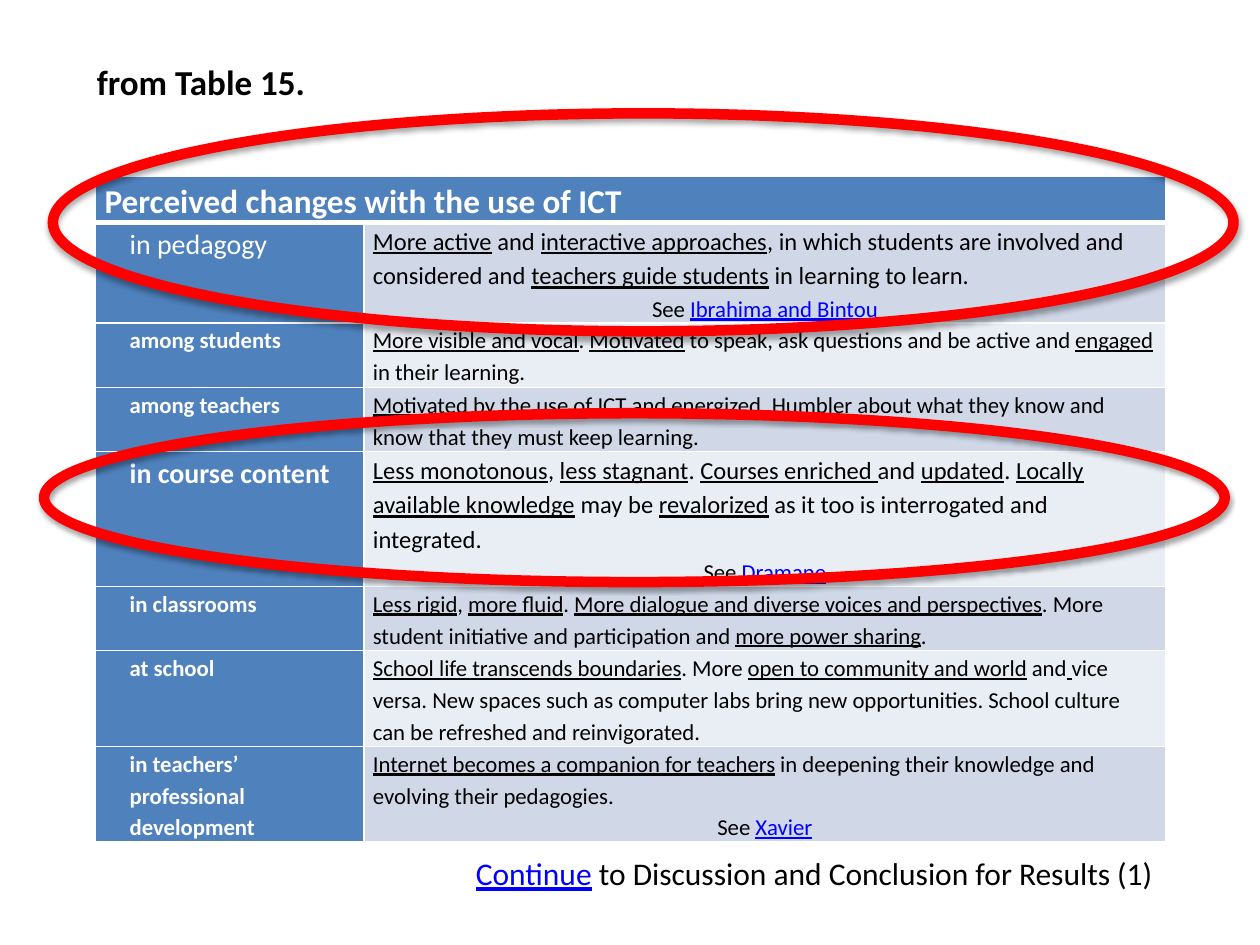
from dataclasses import dataclass

from lxml.etree import SubElement
from pptx import Presentation
from pptx.dml.color import RGBColor
from pptx.enum.shapes import MSO_SHAPE
from pptx.enum.text import MSO_ANCHOR, MSO_AUTO_SIZE, PP_ALIGN
from pptx.oxml.ns import qn
from pptx.util import Inches, Pt


@dataclass(frozen=True)
class Theme:
    font: str = "Calibri"
    text: str = "000000"
    light: str = "FFFFFF"
    link: str = "0000FF"
    heading_fill: str = "4F81BD"
    bands: tuple = ("D0D8E8", "E9EDF4")
    highlight: str = "FF0000"
    title_size: int = 20
    header_size: int = 19
    footer_size: int = 18
    label_size: int = 16
    emphasis_size: int = 14
    body_size: int = 13


class SlideBuilder:
    def __init__(self, slide, theme):
        self.slide = slide
        self.theme = theme

    def run(self, paragraph, text, size, color, bold=False, underline=False):
        run = paragraph.add_run()
        run.text = text
        font = run.font
        font.name, font.size = self.theme.font, Pt(size)
        font.bold, font.underline = bold, underline
        font.color.rgb = RGBColor.from_string(color)

    def marked_runs(self, paragraph, text, size):
        """Underline the parts enclosed in underscores."""
        for index, part in enumerate(text.split("_")):
            if part:
                self.run(paragraph, part, size, self.theme.text, underline=index % 2 == 1)

    def spacing(self, paragraph, before=0, after=0):
        paragraph.line_spacing = 1.15
        paragraph.space_before, paragraph.space_after = Pt(before), Pt(after)

    def text_box(self, left, top, width, height):
        box = self.slide.shapes.add_textbox(Inches(left), Inches(top), Inches(width), Inches(height))
        return box.text_frame

    def cell(self, cell, fill, bottom_width=1):
        cell.margin_left = cell.margin_right = Inches(0.07)
        cell.margin_top = cell.margin_bottom = 0
        properties = cell._tc.get_or_add_tcPr()
        for side in "LRTB":
            width = bottom_width if side == "B" else 1
            border = SubElement(properties, qn(f"a:ln{side}"), w=str(Pt(width)))
            line_fill = SubElement(border, qn("a:solidFill"))
            SubElement(line_fill, qn("a:srgbClr"), val=self.theme.light)
        cell.fill.solid()
        cell.fill.fore_color.rgb = RGBColor.from_string(fill)
        return cell.text_frame

    def changes_table(self, left, top, widths, heights, header, changes):
        theme = self.theme
        table = self.slide.shapes.add_table(
            len(heights), len(widths), Inches(left), Inches(top),
            Inches(sum(widths)), Inches(sum(heights))).table
        for column, width in zip(table.columns, widths):
            column.width = Inches(width)
        for row, height in zip(table.rows, heights):
            row.height = Inches(height)

        # Header across both columns
        table.cell(0, 0).merge(table.cell(0, 1))
        for column in range(2):
            self.cell(table.cell(0, column), theme.heading_fill, bottom_width=3)
        heading = table.cell(0, 0).text_frame.paragraphs[0]
        self.spacing(heading, before=5, after=5)
        self.run(heading, header, theme.header_size, theme.light, bold=True)

        # One row for each area of change
        for row, (area, change, person, emphasized, bold) in enumerate(changes, start=1):
            label = self.cell(table.cell(row, 0), theme.heading_fill).paragraphs[0]
            self.spacing(label, before=6)
            label._p.get_or_add_pPr().set("marL", str(Inches(0.2)))
            label_size = theme.label_size if emphasized else theme.body_size
            self.run(label, area, label_size, theme.light, bold=bold)

            band = theme.bands[(row - 1) % 2]
            details = self.cell(table.cell(row, 1), band)
            description = details.paragraphs[0]
            self.spacing(description, before=6, after=0 if person else 6)
            self.marked_runs(description, change,
                             theme.emphasis_size if emphasized else theme.body_size)
            if person:
                reference = details.add_paragraph()
                reference.alignment = PP_ALIGN.CENTER
                self.spacing(reference, after=6)
                self.run(reference, "See ", theme.body_size, theme.text)
                self.run(reference, person, theme.body_size, theme.link, underline=True)

    def title(self, text, left, top, width, height):
        frame = self.text_box(left, top, width, height)
        frame.word_wrap = True
        frame.vertical_anchor = MSO_ANCHOR.MIDDLE
        self.run(frame.paragraphs[0], text, self.theme.title_size, self.theme.text, bold=True)

    def footer(self, link, text, left, top, width, height):
        frame = self.text_box(left, top, width, height)
        frame.word_wrap = False
        frame.auto_size = MSO_AUTO_SIZE.SHAPE_TO_FIT_TEXT
        paragraph = frame.paragraphs[0]
        paragraph.alignment = PP_ALIGN.RIGHT
        self.run(paragraph, link, self.theme.footer_size, self.theme.link, underline=True)
        self.run(paragraph, text, self.theme.footer_size, self.theme.text)

    def highlight(self, left, top, width, height):
        ring = self.slide.shapes.add_shape(
            MSO_SHAPE.OVAL, Inches(left), Inches(top), Inches(width), Inches(height))
        ring.fill.background()
        ring.line.color.rgb = RGBColor.from_string(self.theme.highlight)
        ring.line.width = Pt(6)
        # Soft shadow straight below the ring
        ring.shadow.inherit = False
        effects = ring._element.spPr.find(qn("a:effectLst"))
        shadow = SubElement(effects, qn("a:outerShdw"), blurRad=str(Pt(3.1)),
                            dist=str(Pt(1.8)), dir="5400000", rotWithShape="0")
        color = SubElement(shadow, qn("a:srgbClr"), val=self.theme.text)
        SubElement(color, qn("a:alpha"), val="35000")


# Area, change, person referred to, emphasized, bold label
CHANGES = [
    ("in pedagogy",
     "_More active_ and _interactive approaches_, in which students are involved and "
     "considered and _teachers guide students_ in learning to learn.",
     "Ibrahima and Bintou", True, False),
    ("among students",
     "_More visible and vocal_. _Motivated_ to speak, ask questions and be active and "
     "_engaged_ in their learning.", None, False, True),
    ("among teachers",
     "_Motivated_ by the use of ICT and _energized_. _Humbler_ about what they know and "
     "know that they must keep learning.", None, False, True),
    ("in course content",
     "_Less monotonous_, _less stagnant_. _Courses enriched _and _updated_. "
     "_Locally available knowledge_ may be _revalorized_ as it too is interrogated and "
     "integrated.", "Dramane", True, True),
    ("in classrooms",
     "_Less rigid_, _more fluid_. _More dialogue and diverse voices and perspectives_. "
     "More student initiative and participation and _more power sharing_.",
     None, False, True),
    ("at school",
     "_School life transcends boundaries_. More _open to community and world_ and_ _vice "
     "versa. New spaces such as computer labs bring new opportunities. School culture "
     "can be refreshed and reinvigorated.", None, False, True),
    ("in teachers’ professional development",
     "_Internet becomes a companion for teachers_ in deepening their knowledge and "
     "evolving their pedagogies.", "Xavier", False, True),
]


def main():
    presentation = Presentation()
    presentation.slide_width, presentation.slide_height = Inches(10), Inches(7.5)
    slide = presentation.slides.add_slide(presentation.slide_layouts[6])
    builder = SlideBuilder(slide, Theme())

    # Table of changes
    builder.changes_table(0.76, 1.4, (2.13, 6.36),
                          (0.36, 0.76, 0.51, 0.51, 0.76, 0.51, 0.76, 0.76),
                          "Perceived changes with the use of ICT", CHANGES)

    # Footer and title
    builder.footer("Continue", " to Discussion and Conclusion for Results (1)",
                   3.61, 6.73, 5.64, 0.4)
    builder.title("from Table 15.", 0.67, 0.29, 8.13, 0.71)

    # Rings around pedagogy and course content
    builder.highlight(0.42, 0.9, 9.37, 1.73)
    builder.highlight(0.35, 3.28, 9.37, 1.34)

    presentation.save("out.pptx")


if __name__ == "__main__":
    main()
